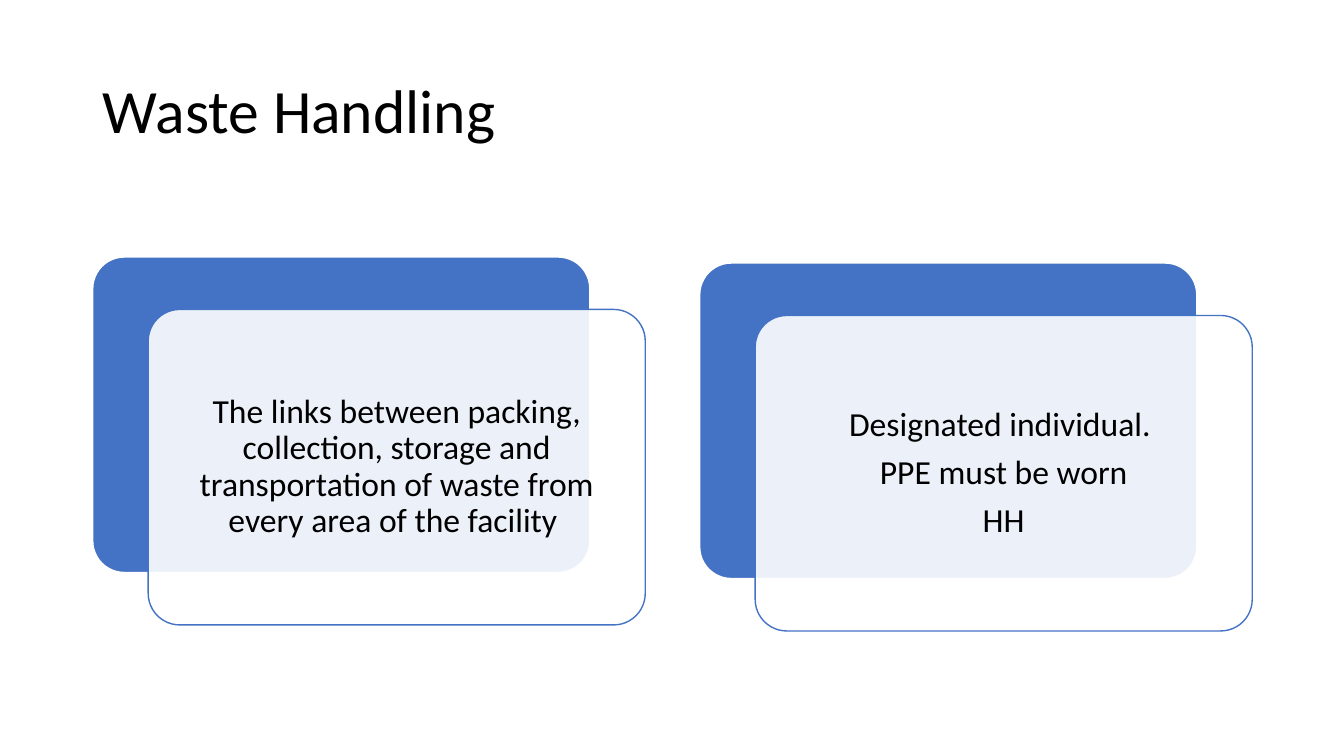
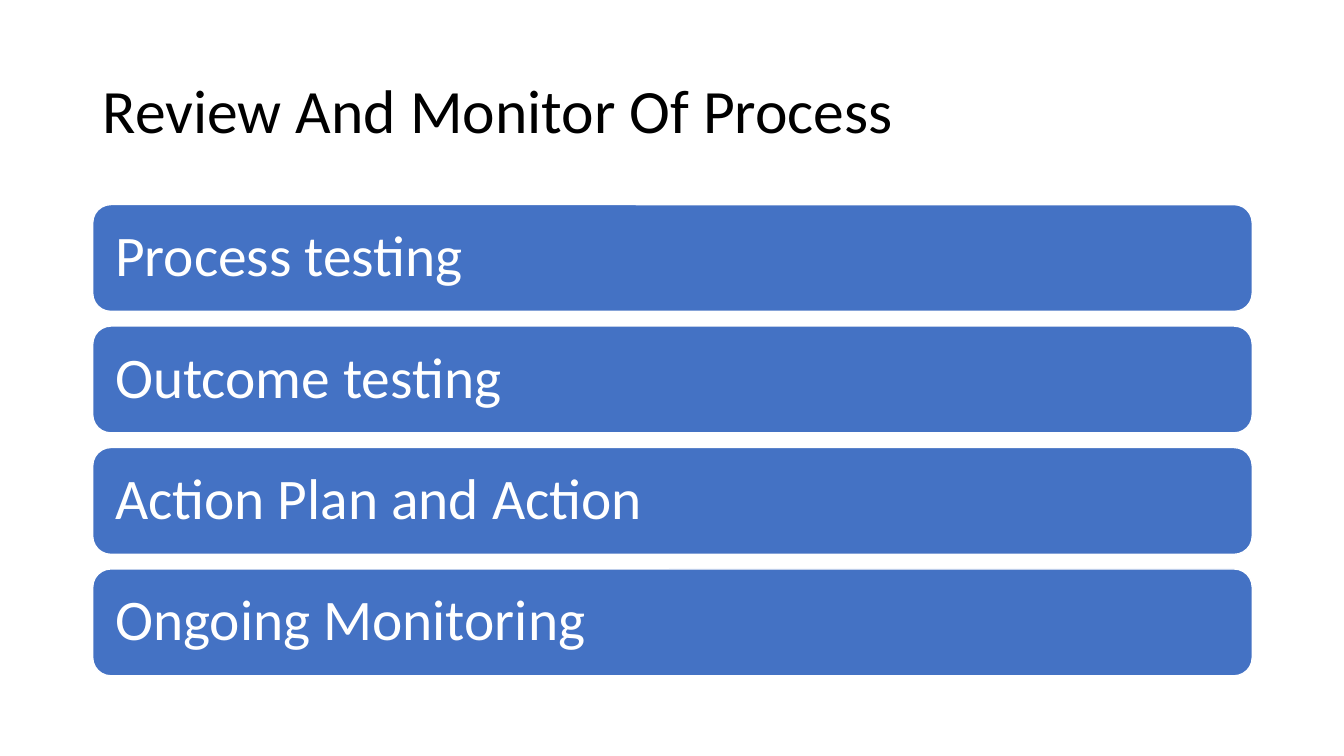
"""Build two slides on waste handling and process review."""
from lxml.etree import SubElement
from pptx import Presentation
from pptx.dml.color import RGBColor
from pptx.enum.shapes import MSO_SHAPE
from pptx.enum.text import MSO_ANCHOR, PP_ALIGN
from pptx.oxml.ns import qn
from pptx.util import Inches, Pt

FONT = "Calibri"
BLUE, WHITE, BLACK = "4472C4", "FFFFFF", "000000"
LEFT, CONTENT_WIDTH = 0.92, 11.5


def add_page(deck, title_text):
    page = deck.slides.add_slide(deck.slide_layouts[5])
    title = page.shapes.title
    title.left, title.top = Inches(LEFT), Inches(0.4)
    title.width, title.height = Inches(CONTENT_WIDTH), Inches(1.45)
    title.text_frame.text = title_text
    title.text_frame.vertical_anchor = MSO_ANCHOR.MIDDLE
    para = title.text_frame.paragraphs[0]
    para.alignment = PP_ALIGN.LEFT
    para.line_spacing = 0.9
    para.font.name, para.font.size = FONT, Pt(44)
    para.font.color.rgb = RGBColor.from_string(BLACK)
    return page


def add_panel(page, position, fill, line, corner, lines=(), size=24,
              color=BLACK, align=PP_ALIGN.CENTER, inset=0.1):
    panel = page.shapes.add_shape(MSO_SHAPE.ROUNDED_RECTANGLE,
                                  *[Inches(length) for length in position])
    panel.adjustments[0] = corner
    panel.shadow.inherit = False
    panel.fill.solid()
    panel.fill.fore_color.rgb = RGBColor.from_string(fill)
    panel.line.color.rgb = RGBColor.from_string(line)
    panel.line.width = Pt(1)
    if lines:
        frame = panel.text_frame
        frame.word_wrap = True
        frame.vertical_anchor = MSO_ANCHOR.MIDDLE
        frame.margin_left = frame.margin_right = Inches(inset)
        frame.margin_top = frame.margin_bottom = Inches(inset)
        frame.text = "\n".join(lines)
        for para in frame.paragraphs:
            para.alignment = align
            para.line_spacing = 0.9
            para.space_after = Pt(0.35 * size)
            para.font.name, para.font.size = FONT, Pt(size)
            para.font.color.rgb = RGBColor.from_string(color)
    return panel


deck = Presentation()
deck.slide_width, deck.slide_height = Inches(13.33), Inches(7.5)

page = add_page(deck, "Waste Handling")
card_width, card_height = 4.93, 3.13
cards = [
    (LEFT, 2.55, ["The links between packing, collection, storage and "
                  "transportation of waste from every area of the facility "]),
    (6.94, 2.61, ["Designated individual. ", "PPE must be worn", "HH"]),
]
for left, top, lines in cards:
    add_panel(page, (left, top, card_width, card_height), BLUE, WHITE, 0.1)
    front = add_panel(page, (left + 0.55, top + 0.52, card_width, card_height),
                      WHITE, BLUE, 0.1, lines)
    fill_color = front.fill._xPr.find(qn("a:solidFill"))[0]
    SubElement(fill_color, qn("a:alpha"), val="90000")

page = add_page(deck, "Review And Monitor Of Process")
steps = ["Process testing", "Outcome testing", "Action Plan and Action",
         "Ongoing Monitoring"]
bar_top, bar_height, bar_pitch = 2.03, 1.06, 1.205
for index, step in enumerate(steps):
    add_panel(page, (LEFT, bar_top + index * bar_pitch, CONTENT_WIDTH, bar_height),
              BLUE, WHITE, 0.17, [step], 41, WHITE, PP_ALIGN.LEFT, 0.17)

deck.save("out.pptx")
